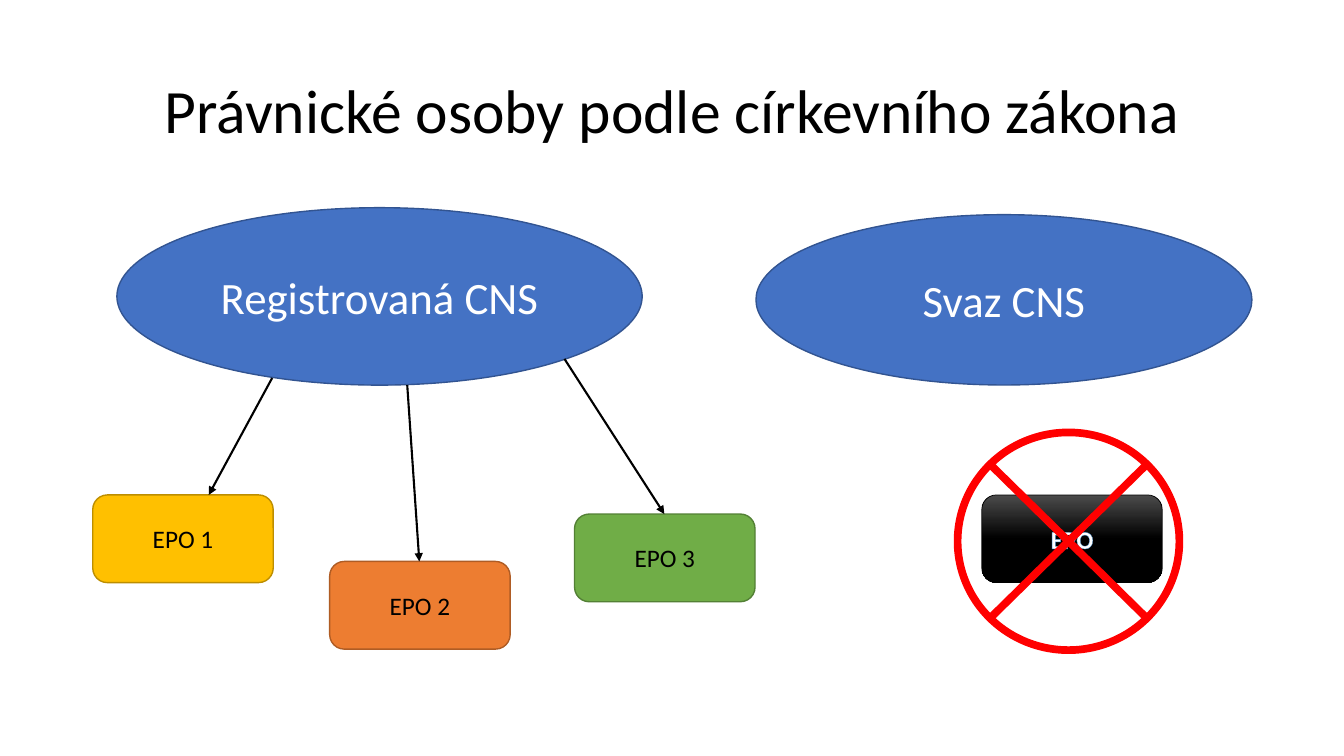
from lxml import etree
from pptx import Presentation
from pptx.dml.color import RGBColor
from pptx.enum.shapes import MSO_CONNECTOR, MSO_SHAPE as SHAPE
from pptx.enum.text import MSO_ANCHOR, PP_ALIGN
from pptx.oxml import parse_xml
from pptx.oxml.ns import nsdecls, qn
from pptx.util import Inches, Pt

WIDTH, HEIGHT = 13.33, 7.5
COL, ROW = Inches(WIDTH) / 100, Inches(HEIGHT) / 100
EPO_W, EPO_H = 13.43, 11.6
COLORS = {
    "black": "000000", "white": "FFFFFF", "gray": "4B4B4B", "red": "FF0000",
    "blue": "4472C4", "blue_edge": "325491", "glow": "5B9BD5",
    "gold": "FFC000", "gold_edge": "BD8E00",
    "orange": "ED7D31", "orange_edge": "AF5C24",
    "green": "70AD47", "green_edge": "538035",
}


def rgb(name):
    """Return the named colour."""
    return RGBColor.from_string(COLORS[name])


def emu(x, y, w, h):
    """Turn columns and rows into slide lengths."""
    return round(x * COL), round(y * ROW), round(w * COL), round(h * ROW)


def put_text(s, text, size=18, color="black", bold=False, spacing=1.0):
    """Write one centred line into a shape and return its run."""
    tf = s.text_frame
    tf.word_wrap = True
    tf.vertical_anchor = MSO_ANCHOR.MIDDLE
    p = tf.paragraphs[0]
    p.alignment = PP_ALIGN.CENTER
    p.line_spacing = spacing
    r = p.add_run()
    r.text = text
    r.font.name, r.font.size, r.font.bold = "Calibri", Pt(size), bold
    r.font.color.rgb = rgb(color)
    return r


def add_shape(sp, kind, box, fill=None, edge="black", weight=1):
    """Add a preset shape without shadow."""
    s = sp.add_shape(kind, *emu(*box))
    s.shadow.inherit = False
    if fill:
        s.fill.solid()
        s.fill.fore_color.rgb = rgb(fill)
    else:
        s.fill.background()
    s.line.color.rgb = rgb(edge)
    s.line.width = Pt(weight)
    return s


def add_arrow(sp, start, end):
    """Draw an arrow between two grid points."""
    c = sp.add_connector(MSO_CONNECTOR.STRAIGHT, *emu(*start, *end))
    c.line.color.rgb = rgb("black")
    c.line.width = Pt(1.5)
    etree.SubElement(c.line._get_or_add_ln(), qn("a:tailEnd"), type="triangle")
    etree.SubElement(c._element.spPr, qn("a:effectLst"))


def add_title(sp, box):
    """Add the slide title."""
    s = sp.add_textbox(*emu(*box))
    put_text(s, "Právnické osoby podle církevního zákona", 44, spacing=0.9)


def add_body(sp, box, text):
    """Add the ellipse of a legal body."""
    s = add_shape(sp, SHAPE.OVAL, box, "blue", "blue_edge")
    put_text(s, text, 32, "white")


def add_registered(sp, box):
    """Add the registered body with arrows to its three entities."""
    x, y, w, h = box
    add_body(sp, (x + 1.8, y, 39.08, 23.47), "Registrovaná CNS")
    entities = [
        ("EPO 1", "gold", 0, 38, 13.35, 22.53, 8.63),
        ("EPO 2", "orange", 17.63, 46.8, 23.4, 23.47, 24.3),
        ("EPO 3", "green", w - EPO_W, 40.53, 35.1, 20, 42.53),
    ]
    for text, fill, left, top, from_x, from_y, to_x in entities:
        s = add_shape(sp, SHAPE.ROUNDED_RECTANGLE,
                      (x + left, y + top, EPO_W, EPO_H), fill, f"{fill}_edge")
        put_text(s, text)
        add_arrow(sp, (x + from_x, y + from_y), (x + to_x, y + top))


def add_union(sp, box):
    """Add the union and its crossed-out entity."""
    x, y, w, h = box
    add_body(sp, (x, y, w, 22.53), "Svaz CNS")
    s = add_shape(sp, SHAPE.ROUNDED_RECTANGLE,
                  (x + 16.8, y + 37.07, EPO_W, EPO_H), weight=0.5)
    s.fill.gradient()
    s.fill.gradient_angle = 270
    for stop, color, position in zip(s.fill.gradient_stops, ("gray", "black"), (0, 0.5)):
        stop.color.rgb = rgb(color)
        stop.position = position
    r = put_text(s, "EPO", color="white", bold=True)
    r.font._element.insert(0, parse_xml(
        f'<a:ln {nsdecls("a")} w="{Pt(0.8)}"><a:solidFill>'
        f'<a:srgbClr val="{COLORS["glow"]}"/></a:solidFill></a:ln>'))
    add_shape(sp, SHAPE.FLOWCHART_SUMMING_JUNCTION,
              (x + 15, y + h / 2, 16.5, h / 2), edge="red", weight=5.5)


def main():
    """Build and save the slide."""
    prs = Presentation()
    prs.slide_width, prs.slide_height = Inches(WIDTH), Inches(HEIGHT)
    sp = prs.slides.add_slide(prs.slide_layouts[6]).shapes
    add_title(sp, (6.9, 5.33, 86.25, 19.33))
    add_registered(sp, (6.9, 27.47, 49.28, 58.4))
    add_union(sp, (56.25, 28.4, 36.9, 57.6))
    prs.save("out.pptx")


if __name__ == "__main__":
    main()
